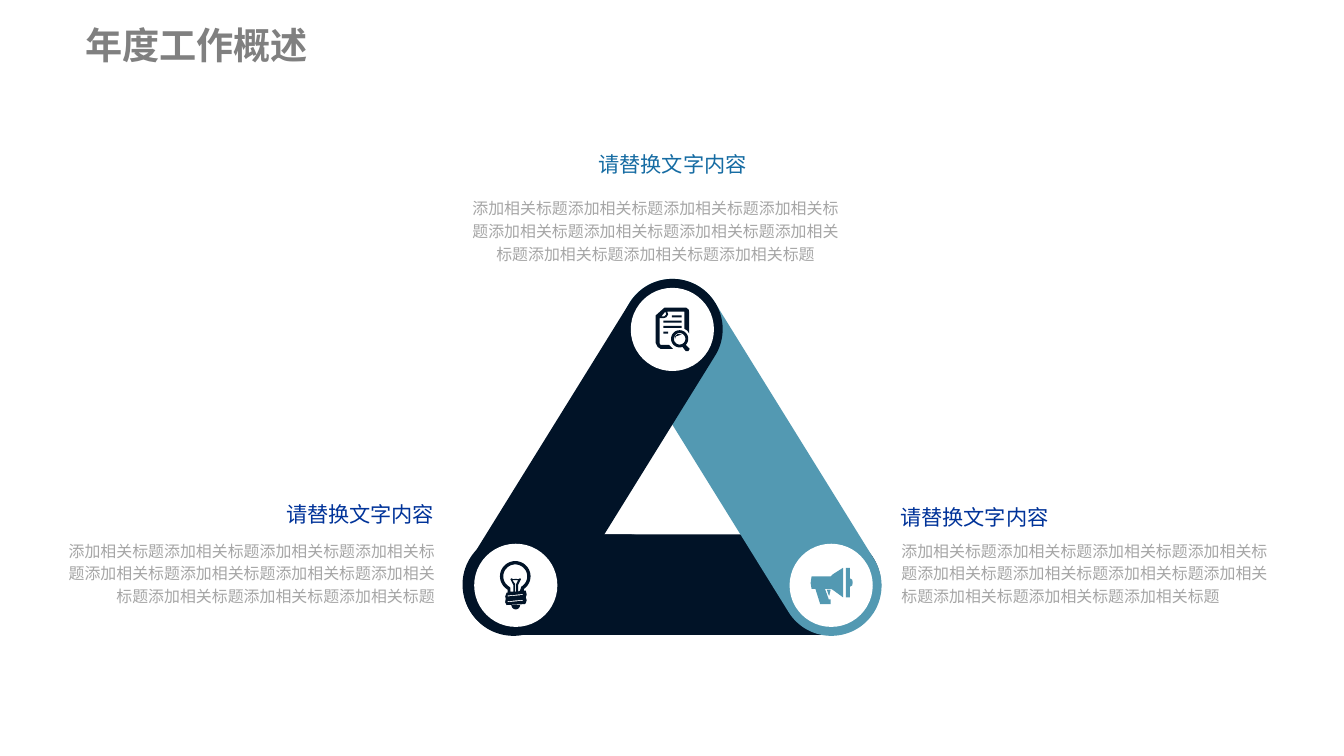
from dataclasses import dataclass
from math import cos, radians, sin

from pptx import Presentation
from pptx.dml.color import RGBColor
from pptx.enum.shapes import MSO_SHAPE
from pptx.enum.text import MSO_ANCHOR, MSO_AUTO_SIZE, PP_ALIGN
from pptx.util import Cm, Pt

ROUND, DISC = MSO_SHAPE.ROUNDED_RECTANGLE, MSO_SHAPE.OVAL
LEFT, MID, RIGHT = PP_ALIGN.LEFT, PP_ALIGN.CENTER, PP_ALIGN.RIGHT
TOP, CENTRE = MSO_ANCHOR.TOP, MSO_ANCHOR.MIDDLE
GROW = MSO_AUTO_SIZE.SHAPE_TO_FIT_TEXT

NAVY, TEAL, WHITE = "011327", "5399B2", "FFFFFF"
BLUE, ROYAL, GREY, PALE = "166CA3", "003399", "808080", "A6A6A6"
HEAD = "请替换文字内容"
BODY = "添加相关标题" * 11
THICK, DIAM = 2.67, 2.21
TILT = 58.2
UNIT = 0.0254  # icon grid step in cm
FINE = 100  # subdivisions of a grid step

Points = list[tuple[float, float]]


@dataclass
class Bar:
    left: float
    top: float
    width: float
    color: str
    turn: float = 0


@dataclass
class Icon:
    left: float
    top: float
    color: str
    paths: list[Points]


@dataclass
class Label:
    left: float
    top: float
    width: float
    height: float
    text: str
    size: int
    color: str
    align: PP_ALIGN = LEFT
    bold: bool = False
    space: float = 1.2
    inset: tuple[float, float] = (0.25, 0.13)
    anchor: MSO_ANCHOR = TOP


def arc(x: float, y: float, r: float, start: int = 0, end: int = 360) -> Points:
    angles = [radians(start + (end - start) * i / 36) for i in range(37)]
    return [(x + r * cos(a), y + r * sin(a)) for a in angles]


def rect(x: float, y: float, right: float, low: float) -> Points:
    return [(x, y), (right, y), (right, low), (x, low)]


def paint(shape, color: str) -> None:
    shape.shadow.inherit = False
    shape.fill.solid()
    shape.fill.fore_color.rgb = RGBColor.from_string(color)
    shape.line.fill.background()


def draw_bar(shapes, bar: Bar) -> None:
    shape = shapes.add_shape(
        ROUND, Cm(bar.left), Cm(bar.top), Cm(bar.width), Cm(THICK))
    shape.adjustments[0] = 0.5
    shape.rotation = bar.turn
    paint(shape, bar.color)


def draw_disc(shapes, icon: Icon) -> None:
    paint(shapes.add_shape(
        DISC, Cm(icon.left), Cm(icon.top), Cm(DIAM), Cm(DIAM)), WHITE)


def draw_icon(shapes, icon: Icon) -> None:
    paths = [[(x * FINE, y * FINE) for x, y in path] for path in icon.paths]
    pen = shapes.build_freeform(*paths[0][0], scale=Cm(UNIT) / FINE)
    for i, path in enumerate(paths):
        if i:
            pen.move_to(*path[0])
        pen.add_line_segments(path[1:], close=True)
    paint(pen.convert_to_shape(), icon.color)


def draw_label(shapes, label: Label) -> None:
    box = shapes.add_textbox(
        Cm(label.left), Cm(label.top), Cm(label.width), Cm(label.height))
    frame = box.text_frame
    side, edge = map(Cm, label.inset)
    para = frame.paragraphs[0]
    run = para.add_run()
    run.text = label.text
    run.font.color.rgb = RGBColor.from_string(label.color)
    formats = (
        (frame, {"word_wrap": True, "auto_size": GROW,
                 "vertical_anchor": label.anchor,
                 "margin_left": side, "margin_right": side,
                 "margin_top": edge, "margin_bottom": edge}),
        (para, {"alignment": label.align, "line_spacing": label.space}),
        (run.font, {"name": "Arial", "size": Pt(label.size),
                    "bold": label.bold}),
    )
    for target, values in formats:
        for key, value in values.items():
            setattr(target, key, value)


# Icon outlines on the grid; a path inside another one is a hole
PAGE = [
    [(696, 322), (718, 322), (720.5, 324), (721, 327), (721, 349),
     (719, 346), (716, 344), (716, 326), (698, 326), (699, 329),
     (697, 332), (694, 333), (690, 333), (690, 359), (691, 361),
     (700, 361), (704, 365), (691, 365), (688, 363), (686, 359),
     (686, 330), (695, 322)],
    [(696, 326), (692, 331), (695, 331), (697, 329)],
    rect(703, 330, 713, 332),
    rect(694, 335.5, 713, 337.5),
    rect(694, 341, 713, 343),
    rect(694, 347, 699, 349),
    arc(711, 354.5, 9),
    arc(711, 354.5, 6),
    [(706, 355), (707, 352), (713, 350), (709, 349.5), (706, 352)],
    [(714, 363), (717.5, 367.5), (720, 367.5), (721.5, 365), (717.5, 361)],
]
BULB = [
    arc(539, 603, 16, 125, 415) + [
        (548, 618), (550, 618), (551, 622), (550, 625), (551, 628),
        (550, 631), (549, 632), (530, 633), (528.5, 630), (529, 626),
        (528.5, 624), (530, 620), (531, 620), (531, 617)],
    arc(539, 603, 12.5, 120, 420) + [
        (544, 618), (542, 619), (542, 612), (545, 606), (544, 605),
        (542, 606), (539.5, 605.5), (537, 606), (535, 605), (534, 606),
        (537, 612), (537, 619), (534, 619), (534, 615)],
    [(536, 607), (539, 611), (539, 619), (540, 619), (540, 611), (542, 607)],
    [(531, 623), (547, 621.5), (547, 622.5), (531, 624)],
    [(531, 629), (547, 627.5), (547, 628.5), (531, 630)],
    arc(539.5, 633, 4.5, 0, 180),
]
HORN = [
    [(849, 603), (869, 603), (871, 601), (882, 594), (882, 625),
     (871, 617), (869, 616), (863, 616), (867, 627), (869, 627),
     (869, 632), (858, 632), (853, 616), (849, 616), (848, 610)],
    [(885, 594), (889, 594), (889, 605), (891.5, 606.5), (892, 609.5),
     (891.5, 612.5), (889, 614), (889, 625), (885, 625)],
    [(865, 617), (869, 617), (868, 621), (868, 623), (867, 623)],
]

BARS = [
    Bar(12.34, 14.2, 11.07, NAVY),
    Bar(14.63, 10.82, 10.69, TEAL, TILT),
    Bar(10.41, 10.82, 10.69, NAVY, 360 - TILT),
    Bar(12.29, 14.2, 5.72, NAVY),
]
ICONS = [
    Icon(16.76, 7.65, NAVY, PAGE),
    Icon(12.6, 14.45, NAVY, BULB),
    Icon(20.98, 14.45, TEAL, HORN),
]
LABELS = [
    Label(15.24, 3.76, 4.85, 1.07, HEAD, 16, BLUE, RIGHT),
    Label(12.24, 5.05, 10.36, 2.11, BODY, 12, PALE, MID),
    Label(6.43, 13.06, 5.36, 1.07, HEAD, 16, ROYAL, RIGHT),
    Label(1.45, 14.15, 10.36, 2.06, BODY, 12, PALE, RIGHT),
    Label(2.26, 0.56, 6.43, 1.24, "年度工作概述", 28, GREY, bold=True,
          space=1.0, inset=(0, 0), anchor=CENTRE),
    Label(23.67, 13.13, 5.36, 1.02, HEAD, 16, ROYAL),
    Label(23.7, 14.15, 10.36, 2.06, BODY, 12, PALE),
]


def main() -> None:
    deck = Presentation()
    deck.slide_width, deck.slide_height = Cm(35.71), Cm(20.09)
    shapes = deck.slides.add_slide(deck.slide_layouts[6]).shapes
    # Triangle, discs, icons, then text
    for draw, items in ((draw_bar, BARS), (draw_disc, ICONS),
                        (draw_icon, ICONS), (draw_label, LABELS)):
        for item in items:
            draw(shapes, item)
    deck.save("out.pptx")


if __name__ == "__main__":
    main()
